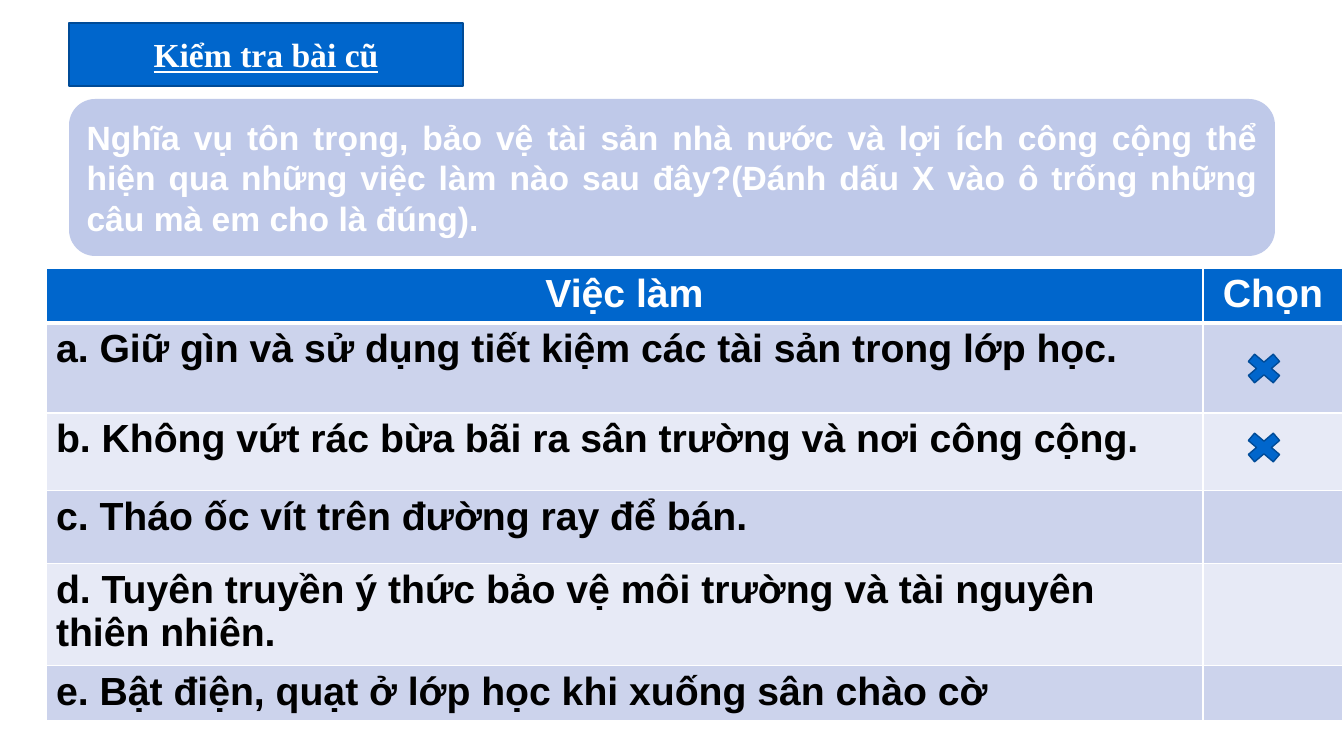
"""Build the lesson review slide with a question and an answer table."""
import lxml.etree
import pptx
import pptx.dml.color
import pptx.enum.shapes
import pptx.enum.text
import pptx.oxml.ns
import pptx.util

RGBColor = pptx.dml.color.RGBColor
Shape = pptx.enum.shapes.MSO_SHAPE
Align = pptx.enum.text.PP_ALIGN
Anchor = pptx.enum.text.MSO_ANCHOR
qn = pptx.oxml.ns.qn

BLUE = RGBColor(0x00, 0x66, 0xCC)
DARK_BLUE = RGBColor(0x00, 0x4B, 0x97)
PERIWINKLE = RGBColor(0x60, 0x7A, 0xC9)
BANDS = (RGBColor(0xCC, 0xD3, 0xEC), RGBColor(0xE7, 0xEA, 0xF6))
WHITE = RGBColor(0xFF, 0xFF, 0xFF)
BLACK = RGBColor(0x00, 0x00, 0x00)

HEADING = "Kiểm tra bài cũ"
QUESTION = (
    "Nghĩa vụ tôn trọng, bảo vệ tài sản nhà nước và lợi ích công cộng thể hiện "
    "qua những việc làm nào sau đây?(Đánh dấu X vào ô trống những câu mà em cho là đúng)."
)
ROWS = (
    ("Việc làm", "Chọn"),
    ("a. Giữ gìn và sử dụng tiết kiệm các tài sản trong lớp học.", ""),
    ("b. Không vứt rác bừa bãi ra sân trường và nơi công cộng.", ""),
    ("c. Tháo ốc vít trên đường ray để bán.", ""),
    ("d. Tuyên truyền ý thức bảo vệ môi trường và tài nguyên thiên nhiên.", ""),
    ("e. Bật điện, quạt ở lớp học khi xuống sân chào cờ", ""),
)
COLUMN_WIDTHS = (1157, 140)
ROW_HEIGHTS = (55, 90, 78, 73, 102, 55)


def px(length):
    """Turn whole pixels into EMU."""
    return pptx.util.Emu(round(length * 914400 / 100.8))


def write(frame, text, size, color, align, font="Arial"):
    """Write one bold paragraph into a text frame."""
    frame.text = text
    para = frame.paragraphs[0]
    para.alignment = align
    para.font.name = font
    para.font.size = pptx.util.Pt(size)
    para.font.bold = True
    para.font.color.rgb = color
    return para


def paint(shape):
    """Give a shape the blue fill and its darker outline."""
    shape.fill.solid()
    shape.fill.fore_color.rgb = BLUE
    shape.line.color.rgb = DARK_BLUE
    shape.line.width = pptx.util.Pt(1)


def add_heading(page):
    """Turn the title placeholder into a rounded blue label."""
    title = page.shapes.title
    title.left, title.top, title.width, title.height = map(px, (69, 23, 394, 63))
    outline = lxml.etree.SubElement(title.element.spPr, qn("a:prstGeom"), prst="roundRect")
    lxml.etree.SubElement(outline, qn("a:avLst"))
    paint(title)
    title.text_frame.vertical_anchor = Anchor.MIDDLE
    para = write(title.text_frame, HEADING, 24, WHITE, Align.CENTER, "Times New Roman")
    para.font.underline = True


def add_question(page):
    """Add the translucent rounded box with the question."""
    box = page.shapes.add_shape(Shape.ROUNDED_RECTANGLE, *map(px, (69, 99, 1206, 157)))
    box.shadow.inherit = False
    box.fill.solid()
    box.fill.fore_color.rgb = PERIWINKLE
    tint = box.element.spPr.find(qn("a:solidFill"))[0]
    lxml.etree.SubElement(tint, qn("a:alpha"), val="40000")
    box.line.fill.background()
    box.text_frame.word_wrap = True
    box.text_frame.vertical_anchor = Anchor.MIDDLE
    write(box.text_frame, QUESTION, 24, WHITE, Align.JUSTIFY)


def add_borders(cell, top, bottom):
    """Draw white cell borders, with top and bottom widths in points."""
    properties = cell._tc.get_or_add_tcPr()
    for side, points in (("L", 1), ("R", 1), ("T", top), ("B", bottom)):
        width = str(pptx.util.Pt(points))
        line = lxml.etree.SubElement(properties, qn(f"a:ln{side}"), w=width)
        fill = lxml.etree.SubElement(line, qn("a:solidFill"))
        lxml.etree.SubElement(fill, qn("a:srgbClr"), val=str(WHITE))


def add_answers(page):
    """Add the table of actions with a column for the choice."""
    frame = page.shapes.add_table(
        len(ROWS), len(COLUMN_WIDTHS),
        *map(px, (46, 268, sum(COLUMN_WIDTHS), sum(ROW_HEIGHTS))),
    )
    table = frame.table
    for column, width in zip(table.columns, COLUMN_WIDTHS):
        column.width = px(width)
    for index, (texts, height) in enumerate(zip(ROWS, ROW_HEIGHTS)):
        table.rows[index].height = px(height)
        header = index == 0
        for cell, text in zip(table.rows[index].cells, texts):
            add_borders(cell, 3 if index == 1 else 1, 3 if header else 1)
            cell.fill.solid()
            cell.fill.fore_color.rgb = BLUE if header else BANDS[(index - 1) % 2]
            cell.margin_top = cell.margin_bottom = px(4)
            write(cell.text_frame, text, 28, WHITE if header else BLACK,
                  Align.CENTER if header else Align.LEFT)


def add_cross(page, top):
    """Mark a chosen row with a cross."""
    cross = page.shapes.add_shape(Shape.MATH_MULTIPLY, *map(px, (1240, top, 48, 41)))
    cross.shadow.inherit = False
    paint(cross)


def main():
    """Build and save the deck."""
    deck = pptx.Presentation()
    deck.slide_width, deck.slide_height = px(1344), px(756)
    page = deck.slides.add_slide(deck.slide_layouts.get_by_name("Title Only"))
    add_heading(page)
    add_question(page)
    add_answers(page)
    for top in (348, 427):
        add_cross(page, top)
    deck.save("out.pptx")


if __name__ == "__main__":
    main()
